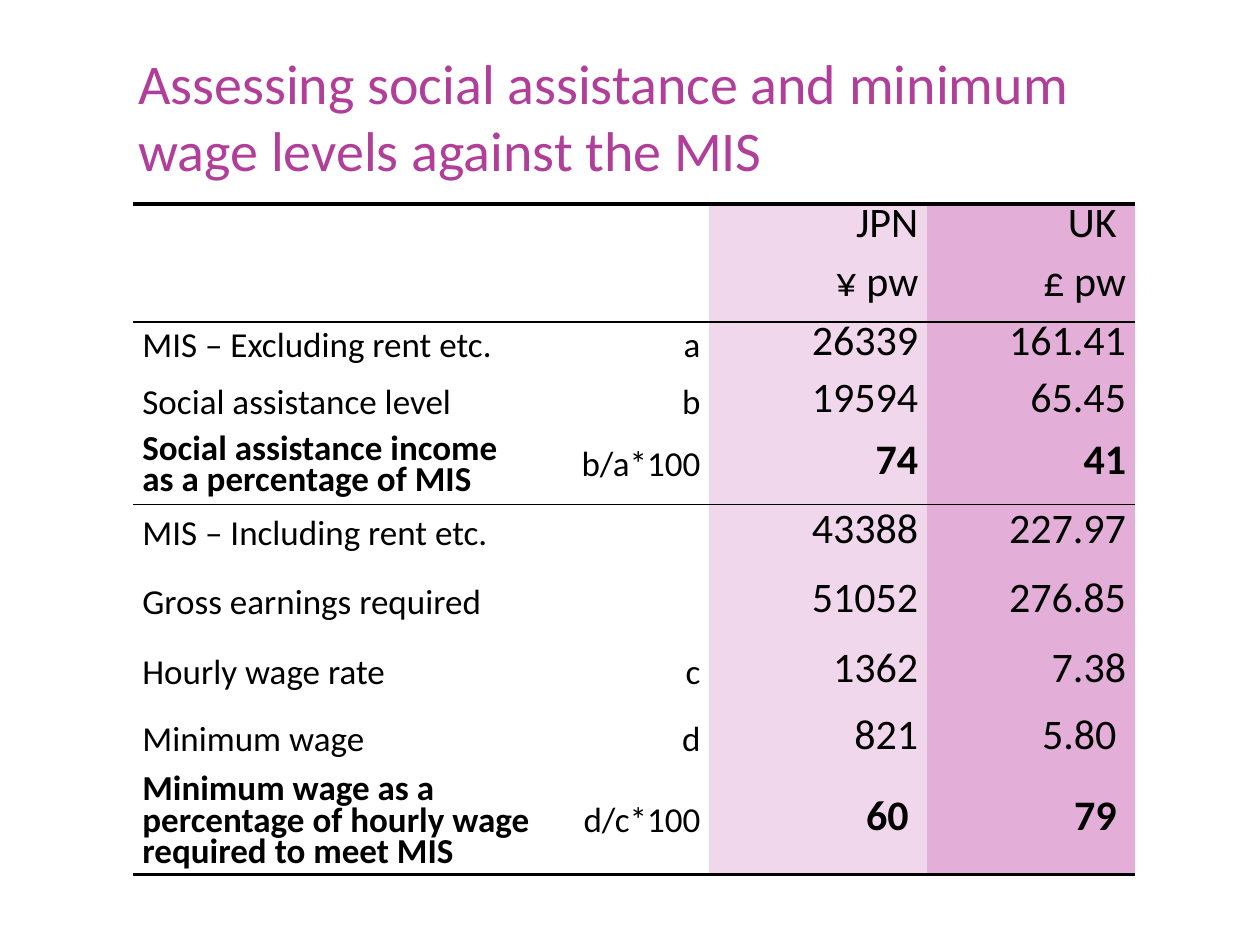
from lxml.etree import SubElement
from pptx import Presentation
from pptx.dml.color import RGBColor
from pptx.enum.text import MSO_ANCHOR, PP_ALIGN
from pptx.oxml.ns import qn
from pptx.util import Cm, Pt

# Content
TITLE = "Assessing social assistance and minimum wage levels against the MIS"
ROWS = [  # label, formula, Japan, UK
    ("", "", "JPN", "UK "),
    ("", "", "¥ pw", "£ pw"),
    ("MIS – Excluding rent etc.", "a", "26339", "161.41"),
    ("Social assistance level", "b", "19594", "65.45"),
    ("Social assistance income\nas a percentage of MIS", "b/a*100", "74", "41"),
    ("MIS – Including rent etc.", "", "43388", "227.97"),
    ("Gross earnings required", "", "51052", "276.85"),
    ("Hourly wage rate", "c", "1362", "7.38"),
    ("Minimum wage", "d", "821", "5.80 "),
    ("Minimum wage as a percentage of hourly wage required to meet MIS",
     "d/c*100", "60 ", "79 "),
]
RESULT_ROWS = {4, 9}

# Look
COLORS = {"title": "B13F9A", "text": "000000", "rule": "000000",
          "japan": "F1D7EC", "uk": "E3AFD8"}
COLUMN_FILLS = [None, None, "japan", "uk"]
COLUMN_SIZES = [20, 20, 24, 24]
COLUMN_WIDTHS = [8.61, 3, 4.39, 4.19]
ROW_HEIGHTS = [1.19, 1.19, 1.19, 1.09, 1.4, 1.4, 1.4, 1.4, 1.3, 1.96]
RULES = {0: 2.25, 2: 1, 5: 1, 10: 2.25}  # row boundary: line width


def write(frame, text, size=20, color="text", bold=False,
          align=PP_ALIGN.LEFT, spacing=None):
    frame.text = text
    for paragraph in frame.paragraphs:
        paragraph.alignment = align
        paragraph.line_spacing = spacing
        paragraph.font.size = Pt(size)
        for run in paragraph.runs:
            run.font.name = "Calibri"
            run.font.size = Pt(size)
            run.font.bold = bold
            run.font.color.rgb = RGBColor.from_string(COLORS[color])


def set_borders(cell, top, bottom):
    properties = cell._tc.get_or_add_tcPr()
    for side, width in (("L", None), ("R", None), ("T", top), ("B", bottom)):
        line = SubElement(properties, qn(f"a:ln{side}"))
        if width:
            line.set("w", str(Pt(width)))
            fill = SubElement(line, qn("a:solidFill"))
            SubElement(fill, qn("a:srgbClr"), val=COLORS["rule"])
        else:
            SubElement(line, qn("a:noFill"))


presentation = Presentation()
presentation.slide_width, presentation.slide_height = Cm(25.4), Cm(19.05)
slide = presentation.slides.add_slide(presentation.slide_layouts[6])

# Title
heading = slide.shapes.add_textbox(Cm(2.54), Cm(0.76), Cm(21.59), Cm(3.18)).text_frame
heading.word_wrap = True
heading.vertical_anchor = MSO_ANCHOR.BOTTOM
heading.margin_bottom = Cm(0.25)
write(heading, TITLE, size=32, color="title")

# Comparison table
comparison = slide.shapes.add_table(
    len(ROWS), len(COLUMN_WIDTHS), Cm(2.69), Cm(4.11),
    Cm(sum(COLUMN_WIDTHS)), Cm(sum(ROW_HEIGHTS))).table
comparison.first_row = comparison.horz_banding = False
for column, width in zip(comparison.columns, COLUMN_WIDTHS):
    column.width = Cm(width)
for row, height in zip(comparison.rows, ROW_HEIGHTS):
    row.height = Cm(height)

for r, entries in enumerate(ROWS):
    for c, entry in enumerate(entries):
        cell = comparison.cell(r, c)
        cell.margin_left = cell.margin_right = Cm(0.18)
        cell.margin_top = cell.margin_bottom = 0
        cell.vertical_anchor = MSO_ANCHOR.MIDDLE
        set_borders(cell, RULES.get(r), RULES.get(r + 1))
        if COLUMN_FILLS[c]:
            cell.fill.solid()
            cell.fill.fore_color.rgb = RGBColor.from_string(COLORS[COLUMN_FILLS[c]])
        else:
            cell.fill.background()
        write(cell.text_frame, entry, size=COLUMN_SIZES[c],
              bold=r in RESULT_ROWS and c != 1,
              align=PP_ALIGN.RIGHT if c else PP_ALIGN.LEFT, spacing=Pt(18))

presentation.save("out.pptx")
